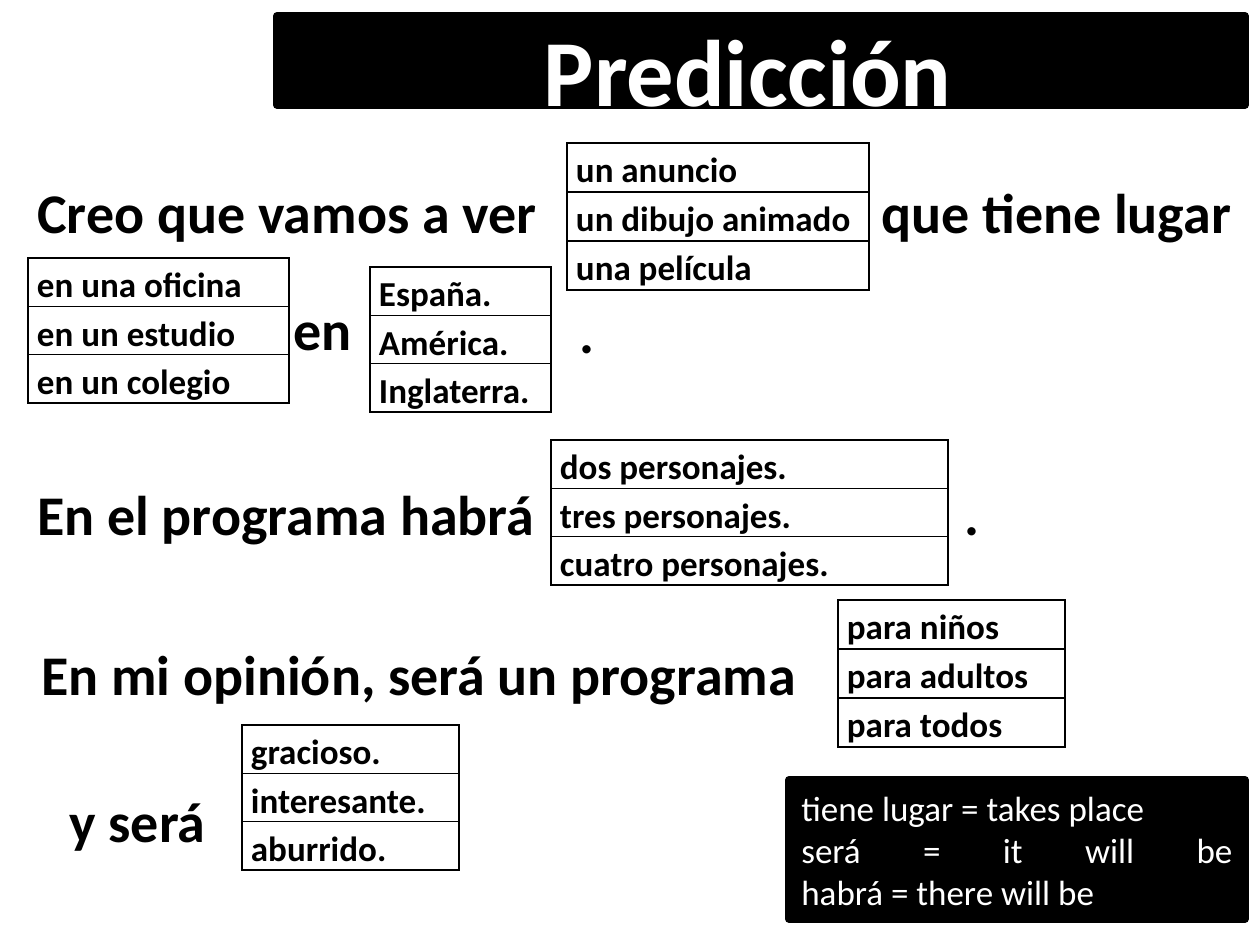
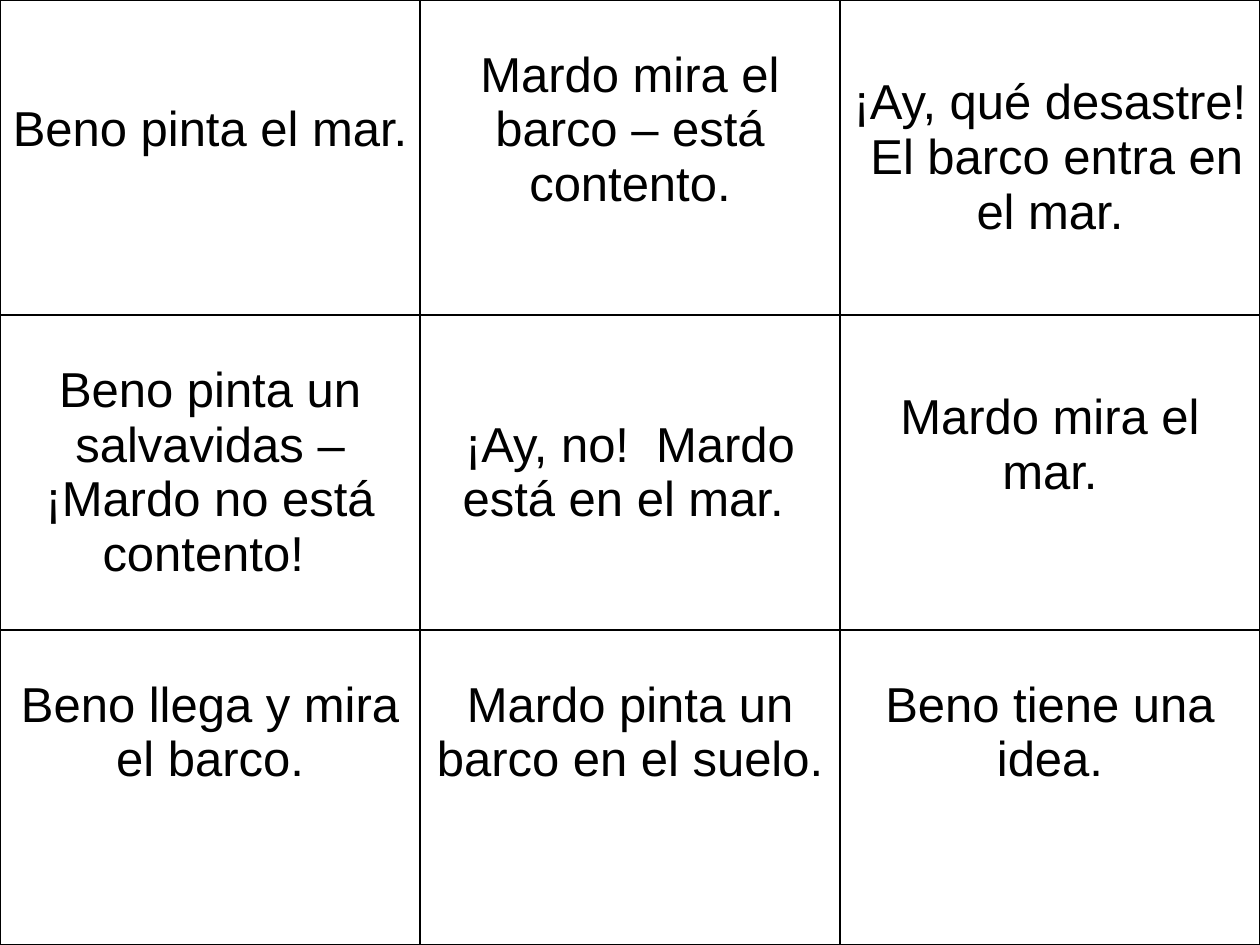
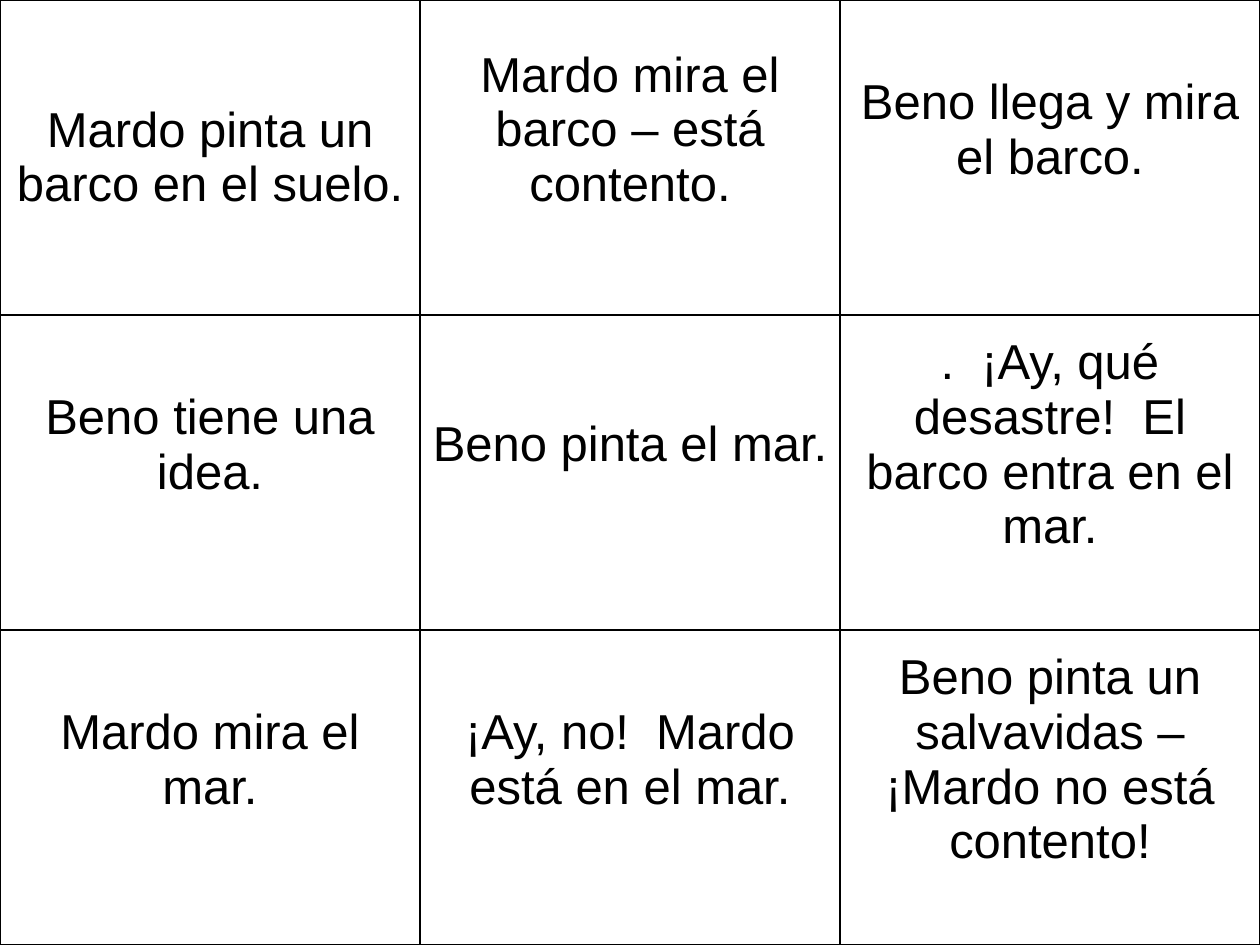
"""Build three Spanish lesson slides: a prediction frame and two sets of story cards."""
from lxml import etree
from pptx import Presentation
from pptx.dml.color import RGBColor
from pptx.enum.shapes import MSO_SHAPE
from pptx.enum.text import MSO_ANCHOR, PP_ALIGN
from pptx.oxml.ns import qn
from pptx.util import Pt

PX = 7257
BLACK = RGBColor(0x00, 0x00, 0x00)
WHITE = RGBColor(0xFF, 0xFF, 0xFF)
LEFT, CENTER, JUSTIFY = PP_ALIGN.LEFT, PP_ALIGN.CENTER, PP_ALIGN.JUSTIFY
TOP, MIDDLE = MSO_ANCHOR.TOP, MSO_ANCHOR.MIDDLE
RECT = MSO_SHAPE.RECTANGLE
LINE_PX = 55


def write(tf, text, size=32, font="Calibri", color=BLACK, bold=True, align=LEFT, spacing=None):
    tf.word_wrap = True
    for i, line in enumerate(text.split("\n")):
        p = tf.add_paragraph() if i else tf.paragraphs[0]
        p.text = line
        p.alignment = align
        p.line_spacing = spacing
        for r in p.runs:
            r.font.name, r.font.size, r.font.bold = font, Pt(size), bold
            r.font.color.rgb = color
    return p


def add_grid(s, x, y, col_w, row_h, rows, anchor, inset, **style):
    n_rows, n_cols = len(rows), len(rows[0])
    table = s.shapes.add_table(n_rows, n_cols, x * PX, y * PX,
                               col_w * n_cols * PX, row_h * n_rows * PX).table
    table.first_row = table.horz_banding = False
    for i, row in enumerate(rows):
        table.rows[i].height = row_h * PX
        for j, (text, blank_lines) in enumerate(row):
            table.columns[j].width = col_w * PX
            cell = table.cell(i, j)
            write(cell.text_frame, text, **style)
            cell.vertical_anchor = anchor
            cell.margin_left = cell.margin_right = inset[0] * PX
            cell.margin_top = inset[1] * PX
            cell.margin_bottom = (inset[1] + blank_lines * LINE_PX) * PX
            tc_pr = cell._tc.get_or_add_tcPr()
            for side in ("a:lnL", "a:lnR", "a:lnT", "a:lnB"):
                ln = etree.SubElement(tc_pr, qn(side), w=str(Pt(1)))
                fill = etree.SubElement(ln, qn("a:solidFill"))
                etree.SubElement(fill, qn("a:srgbClr"), val=str(BLACK))
            cell.fill.background()


prs = Presentation()
prs.slide_width, prs.slide_height = 1260 * PX, 945 * PX
blank = prs.slide_layouts[6]

s = prs.slides.add_slide(blank)
phrases = [
    (25, 171, 542, "Creo que vamos a ver"),
    (869, 171, 392, "que tiene lugar"),
    (281, 288, 97, "en"),
    (567, 291, 53, "."),
    (25, 473, 525, "En el programa habrá"),
    (952, 473, 53, "."),
    (29, 633, 858, "En mi opinión, será un programa"),
    (57, 780, 165, "y será"),
]
for x, y, w, text in phrases:
    tf = s.shapes.add_textbox(x * PX, y * PX, w * PX, 81 * PX).text_frame
    tf.vertical_anchor = MIDDLE
    write(tf, text)

choices = [
    (567, 143, 302, 49, ["un anuncio", "un dibujo animado", "una película"]),
    (28, 258, 261, 48, ["en una oficina", "en un estudio", "en un colegio"]),
    (370, 267, 181, 48, ["España.", "América.", "Inglaterra."]),
    (551, 440, 397, 48, ["dos personajes.", "tres personajes.", "cuatro personajes."]),
    (838, 600, 227, 49, ["para niños", "para adultos", "para todos"]),
    (242, 725, 217, 48, ["gracioso.", "interesante.", "aburrido."]),
]
for x, y, w, row_h, options in choices:
    add_grid(s, x, y, w, row_h, [[(option, 0)] for option in options],
             TOP, (9, 0), size=20, spacing=1.15)

glossary = "tiene lugar = takes place\nserá = it will be\vhabrá = there will be"
panels = [
    (789, 780, 456, 139, glossary, dict(size=20, bold=False, align=JUSTIFY)),
    (277, 16, 968, 89, "Predicción", dict(size=54, align=CENTER)),
]
for x, y, w, h, text, style in panels:
    sp = s.shapes.add_shape(RECT, x * PX, y * PX, w * PX, h * PX)
    sp.shadow.inherit = False
    sp.fill.solid()
    sp.fill.fore_color.rgb = sp.line.color.rgb = BLACK
    sp.line.width = Pt(4.5)
    sp.text_frame.vertical_anchor = MIDDLE
    p = write(sp.text_frame, text, color=WHITE, **style)
r = p.add_run()
r.text = " "
r.font.name, r.font.size = "Calibri", Pt(66)

story_cards = [
    [
        [("Beno pinta el mar.", 1),
         ("Mardo mira el barco – está contento.", 1),
         ("¡Ay, qué desastre!  El barco entra en el mar.", 0)],
        [("Beno pinta un salvavidas – ¡Mardo no está contento! ", 0),
         ("¡Ay, no!  Mardo está en el mar. ", 0),
         ("Mardo mira el mar.", 1)],
        [("Beno llega y mira el barco.", 2),
         ("Mardo pinta un barco en el suelo.", 2),
         ("Beno tiene una idea.", 2)],
    ],
    [
        [("Mardo pinta un barco en el suelo.", 0),
         ("Mardo mira el barco – está contento.", 1),
         ("Beno llega y mira el barco.", 1)],
        [("Beno tiene una idea.", 1),
         ("Beno pinta el mar.", 1),
         (".  ¡Ay, qué desastre!  El barco entra en el mar.", 1)],
        [("Mardo mira el mar.", 1),
         ("¡Ay, no!  Mardo está en el mar.", 1),
         ("Beno pinta un salvavidas – ¡Mardo no está contento!", 1)],
    ],
]
for cards in story_cards:
    s = prs.slides.add_slide(blank)
    add_grid(s, 0, 0, 420, 315, cards, MIDDLE, (12, 6),
             size=28, font="Arial", bold=False, align=CENTER)

prs.save("out.pptx")
